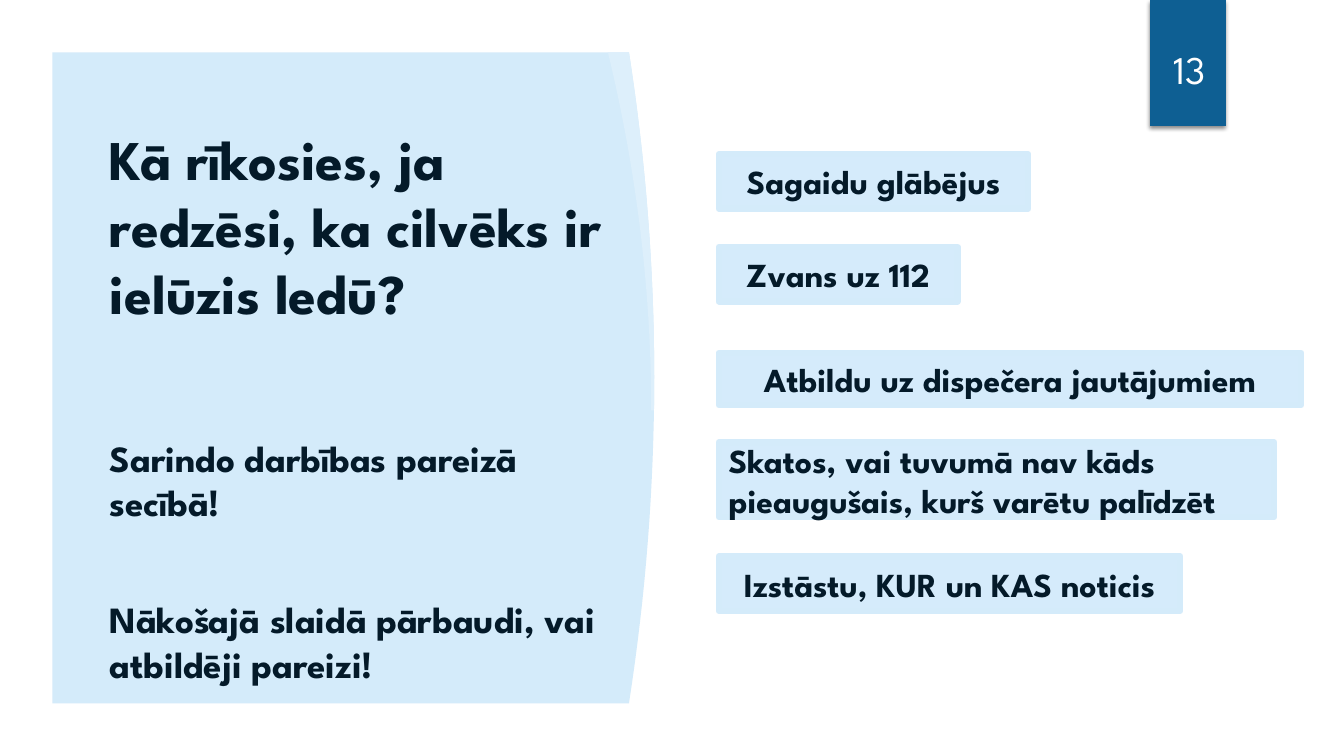
from dataclasses import dataclass

from lxml import etree
from pptx import Presentation
from pptx.dml.color import RGBColor
from pptx.enum.shapes import MSO_SHAPE
from pptx.enum.text import MSO_ANCHOR, PP_ALIGN
from pptx.oxml.ns import qn
from pptx.util import Inches, Pt

RECTANGLE = MSO_SHAPE.RECTANGLE
TOP, MIDDLE, BOTTOM = MSO_ANCHOR.TOP, MSO_ANCHOR.MIDDLE, MSO_ANCHOR.BOTTOM
LEFT, CENTER = PP_ALIGN.LEFT, PP_ALIGN.CENTER

FONT = "League Spartan"
COLORS = {
    "background": "FFFFFF",
    "panel": "D4EBFA",
    "glare": "DDEFFB",
    "card": "D5EBFB",
    "badge": "0E5F93",
    "badge_text": "FFFFFF",
    "text": "041A29",
    "shadow": "000000",
}
CURVE_STEPS = 32

TITLE = "Kā rīkosies, ja redzēsi, ka cilvēks ir ielūzis ledū?"
INSTRUCTIONS = [
    "Sarindo darbības pareizā secībā!",
    "Nākošajā slaidā pārbaudi, vai atbildēji pareizi!",
]
# Text, top, width and height in percent of the slide, alignment
CARDS = [
    ("Sagaidu glābējus", 20.4, 23.03, 7.2, CENTER),
    ("Zvans uz 112", 32.67, 17.78, 7.2, CENTER),
    ("Atbildu uz dispečera jautājumiem", 46.67, 43.35, 6.93, CENTER),
    ("Skatos, vai tuvumā nav kāds pieaugušais, kurš varētu palīdzēt",
     58.53, 41.33, 9.87, LEFT),
    ("Izstāstu, KUR un KAS noticis", 73.6, 34.35, 7.2, CENTER),
]


@dataclass
class Box:
    left: int
    top: int
    width: int
    height: int

    def inside(self, left, top, width, height):
        """Return a box given in percent of this one."""
        return Box(
            int(self.left + self.width * left / 100),
            int(self.top + self.height * top / 100),
            int(self.width * width / 100),
            int(self.height * height / 100),
        )

    def point(self, across, down):
        """Return a position given in shares of this box."""
        return (int(self.left + self.width * across),
                int(self.top + self.height * down))

    def bounds(self):
        return self.left, self.top, self.width, self.height


def color(name):
    return RGBColor.from_string(COLORS[name])


def paint(shape, fill):
    shape.shadow.inherit = False
    shape.fill.solid()
    shape.fill.fore_color.rgb = color(fill)
    shape.line.fill.background()


def write(shape, texts, size, anchor, align=LEFT, bold=True,
          text_color="text", gap=0):
    frame = shape.text_frame
    frame.word_wrap = True
    frame.vertical_anchor = anchor
    for index, text in enumerate(texts):
        paragraph = frame.add_paragraph() if index else frame.paragraphs[0]
        paragraph.alignment = align
        if index:
            paragraph.space_before = Pt(gap)
        run = paragraph.add_run()
        run.text = text
        run.font.name = FONT
        run.font.size = Pt(size)
        run.font.bold = bold
        run.font.color.rgb = color(text_color)


def add_outline(slide, points, fill):
    builder = slide.shapes.build_freeform(*points[0], scale=1.0)
    builder.add_line_segments(points[1:], close=True)
    paint(builder.convert_to_shape(), fill)


def panel_edge(down):
    """Share of the panel's width that its bulging side reaches."""
    return 1 - 0.042 * (2 * down - 1) ** 2


def glare_edge(down):
    return 0.995 - 0.072 * (1 - down / 0.55) ** 2


def curve(box, edge, end):
    shares = [end * step / CURVE_STEPS for step in range(CURVE_STEPS + 1)]
    return [box.point(edge(down), down) for down in shares]


def add_question_panel(slide, box):
    add_outline(slide, [box.point(0, 0), *curve(box, panel_edge, 1),
                        box.point(0, 1)], "panel")
    add_outline(slide, curve(box, panel_edge, 0.55)
                + curve(box, glare_edge, 0.55)[::-1], "glare")
    title = slide.shapes.add_textbox(
        *box.inside(7.87, 15.63, 87.94, 27.09).bounds())
    write(title, [TITLE], 40, BOTTOM)
    body = slide.shapes.add_textbox(
        *box.inside(7.87, 58.05, 86.77, 40.71).bounds())
    write(body, INSTRUCTIONS, 26.4, TOP, gap=52)


def add_badge_shadow(badge):
    effects = badge._element.spPr.find(qn("a:effectLst"))
    shadow = etree.SubElement(
        effects, qn("a:outerShdw"), blurRad=str(Pt(3)), dist=str(Pt(2)),
        dir="5400000", algn="t", rotWithShape="0")
    shade = etree.SubElement(shadow, qn("a:srgbClr"), val=COLORS["shadow"])
    etree.SubElement(shade, qn("a:alpha"), val="45000")


def add_number_badge(slide, box):
    badge = slide.shapes.add_shape(RECTANGLE, *box.bounds())
    paint(badge, "badge")
    add_badge_shadow(badge)
    number = slide.shapes.add_textbox(
        *box.inside(-9.33, 10.4, 122.67, 67.2).bounds())
    write(number, ["13"], 28, BOTTOM, CENTER, bold=False,
          text_color="badge_text")


def add_action_card(slide, box, text, align):
    card = slide.shapes.add_shape(RECTANGLE, *box.bounds())
    paint(card, "card")
    card.line.color.rgb = color("panel")
    card.line.width = Pt(4.5)
    write(card, [text], 24, MIDDLE, align)


def main():
    presentation = Presentation()
    presentation.slide_width = Inches(13.33)
    presentation.slide_height = Inches(7.5)
    page = Box(0, 0, presentation.slide_width, presentation.slide_height)
    slide = presentation.slides.add_slide(presentation.slide_layouts[6])
    slide.background.fill.solid()
    slide.background.fill.fore_color.rgb = color("background")

    add_question_panel(slide, page.inside(3.9, 6.93, 44.78, 86.13))
    add_number_badge(slide, page.inside(85.58, 0, 5.63, 16.67))
    for text, top, width, height, align in CARDS:
        add_action_card(slide, page.inside(53.48, top, width, height),
                        text, align)
    presentation.save("out.pptx")


if __name__ == "__main__":
    main()
